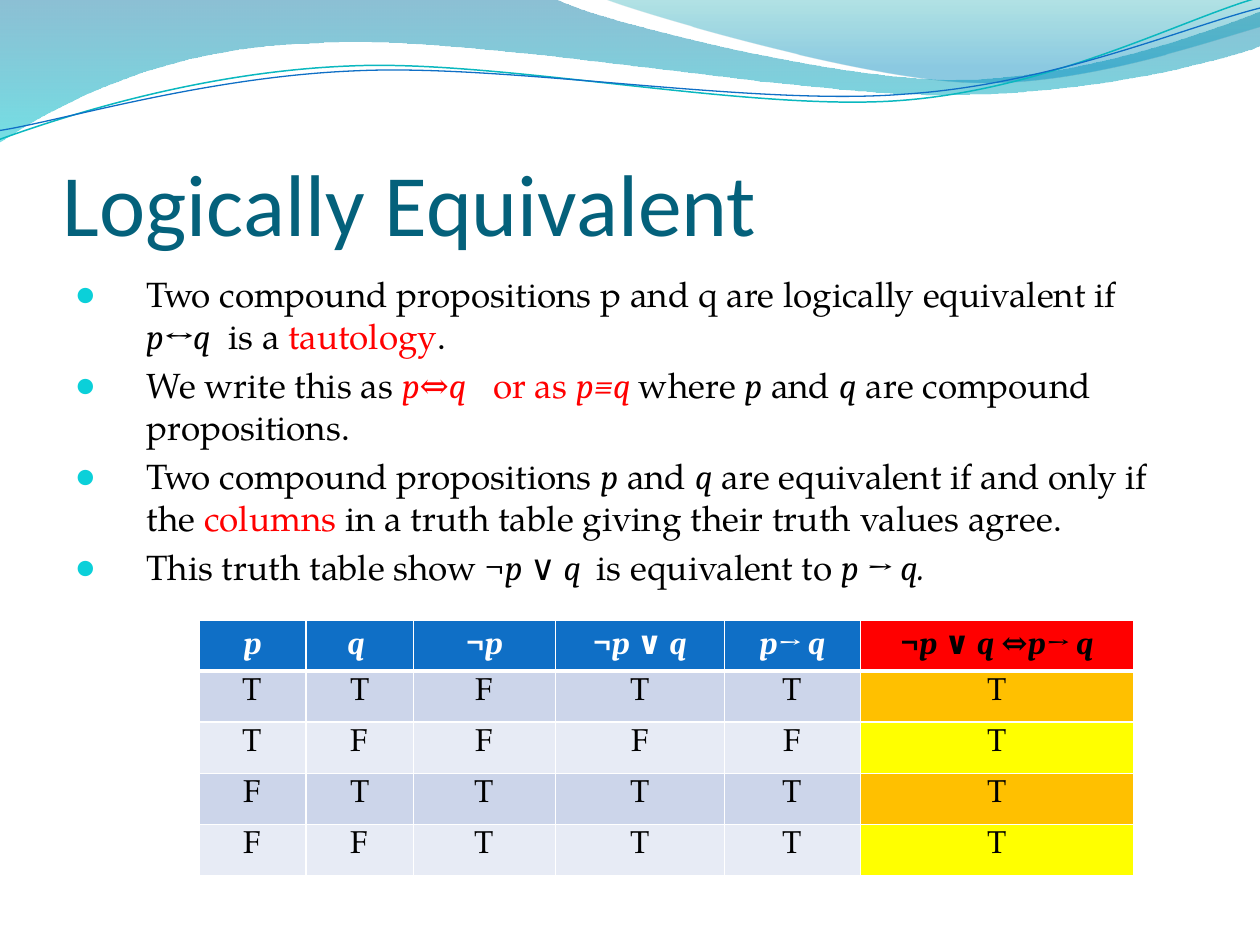
import lxml.etree
import pptx
import pptx.dml.color
import pptx.enum.text
import pptx.oxml.ns
import pptx.util

WIDE, HIGH = 10, 7.5
HUES = {
    "white": "FFFFFF", "black": "000000", "red": "FF0000", "title": "04617B",
    "bullet": "0BD0D9", "blue": "0F6FC6", "teal": "0AB8BF",
    "odd": "CCD5EA", "even": "E7EBF5", "gold": "FFC000", "yellow": "FFFF00",
    "deep": "0074A1", "aqua": "00C6CF", "green": "00A1A9", "sky": "008BBF",
}
SERIF, MATH, SANS = "TeX Gyre Pagella", "Cambria", "Calibri"

# Each outline: a start point, then lines (2 numbers) and curves (6 numbers).
BANDS = [
    ([(0, 0), (4.4, -0.01), (4.76, 0.17, 6.64, 0.63, 7.58, 0.63),
      (8.53, 0.63, 9.58, 0.26, 10, 0.09), (10.01, 0.36),
      (9.83, 0.44, 8.7, 0.76, 7.46, 0.75), (6.22, 0.75, 3.82, 0.28, 2.57, 0.34),
      (1.29, 0.36, 0.46, 0.83, -0.01, 1.13), (0, 0)],
     [(0, "deep", 45), (1, "aqua", 55)]),
    ([(4.79, -0.01), (5.09, 0.11, 6.82, 0.62, 7.69, 0.65),
      (8.56, 0.69, 9.61, 0.32, 10, 0.21), (10, 0), (4.79, -0.01)],
     [(0, "green", 30), (0.8, "sky", 45)]),
]
TILT = 357.3
WAVES = [
    ([(-0.02, 0.87), (0.47, 0.72, 1.58, 0.41, 2.78, 0.42),
      (3.96, 0.42, 5.91, 0.93, 7.12, 0.9), (8.32, 0.87, 9.4, 0.36, 10, 0.22)],
     "teal", 0.85),
    ([(-0.02, 0.8), (0.46, 0.75, 1.64, 0.45, 2.83, 0.46),
      (4.03, 0.46, 5.96, 0.89, 7.16, 0.85), (8.35, 0.83, 9.42, 0.42, 10.02, 0.3)],
     "blue", 0.75),
]

# Runs are (words, marks): m math font, i math italic, r red.
POINTS = [
    [("Two compound propositions p and q are logically equivalent if  ", ""),
     ("p↔q", "i"), ("  is a ", ""), ("tautology", "r"), (".", "")],
    [("We write this as ", ""), ("p⇔q", "ir"), ("   or as ", "r"), ("p≡q ", "ir"),
     ("where ", ""), ("p", "i"), (" and ", ""), ("q", "i"),
     (" are compound propositions.", "")],
    [("Two compound propositions ", ""), ("p", "i"), (" and ", ""), ("q", "i"),
     (" are equivalent if and only if the ", ""), ("columns", "r"),
     (" in a truth table giving their truth values agree.", "")],
    [("This truth table show ", ""), ("¬", "m"), ("p ", "i"), ("∨ ", "m"),
     ("q  ", "i"), ("is equivalent to ", ""), ("p → q.", "i")],
]
HEADS = [
    [("p", "i")], [("q ", "i")], [("¬", "m"), ("p", "i")],
    [("¬", "m"), ("p ", "i"), ("∨ ", "m"), ("q", "i")], [("p→ q", "i")],
    [("¬", "m"), ("p ", "i"), ("∨ ", "m"), ("q ⇔p→ q", "i")],
]
TRUTH = ["TTFTTT", "TFFFFT", "FTTTTT", "FFTTTT"]
COLS = [0.85, 0.85, 1.13, 1.34, 1.08, 2.17]


def inch(size):
    return pptx.util.Inches(size)


def hue(name):
    return pptx.dml.color.RGBColor.from_string(HUES[name])


def node(base, tag, **attrs):
    return lxml.etree.SubElement(base, pptx.oxml.ns.qn(tag), attrs)


def write(para, runs, size=20, font=SERIF, color="black", bold=False, center=False):
    if center:
        para.alignment = pptx.enum.text.PP_ALIGN.CENTER
    for words, marks in runs:
        run = para.add_run()
        run.text = words
        face = run.font
        face.size = pptx.util.Pt(size)
        face.name = MATH if "i" in marks or "m" in marks else font
        face.bold, face.italic = bold, "i" in marks
        face.color.rgb = hue("red" if "r" in marks else color)


def draw(slide, steps, close):
    """Build a freeform through the end points, then bend its curved parts."""
    ends = [(inch(step[-2]), inch(step[-1])) for step in steps]
    pen = slide.shapes.build_freeform(*ends[0], scale=1.0)
    pen.add_line_segments(ends[1:], close=close)
    shape = pen.convert_to_shape()
    shape.shadow.inherit = False
    lines = list(shape._element.iter(pptx.oxml.ns.qn("a:lnTo")))
    for line, step in zip(lines, steps[1:]):
        if len(step) == 6:
            curve = lxml.etree.Element(pptx.oxml.ns.qn("a:cubicBezTo"))
            for x, y in zip(step[::2], step[1::2]):
                node(curve, "a:pt", x=str(inch(x) - shape.left),
                     y=str(inch(y) - shape.top))
            line.getparent().replace(line, curve)
    return shape


def add_band(slide, steps, stops):
    shape = draw(slide, steps, True)
    shape.line.fill.background()
    shape.fill.gradient()
    shape.fill.gradient_angle = 270
    for stop, (place, name, _) in zip(shape.fill.gradient_stops, stops):
        stop.position = place
        stop.color.rgb = hue(name)
    tints = list(shape._element.iter(pptx.oxml.ns.qn("a:srgbClr")))
    for tint, (_, _, alpha) in zip(tints, stops):
        node(tint, "a:alpha", val=str(alpha * 1000))


def add_wave(slide, steps, name, width):
    shape = draw(slide, steps, False)
    shape.rotation = TILT
    shape.fill.background()
    shape.line.color.rgb = hue(name)
    shape.line.width = pptx.util.Pt(width)


def add_box(slide, top, high):
    """Add a wrapped text frame between the side margins."""
    edge = 0.05 * WIDE
    box = slide.shapes.add_textbox(inch(edge), inch(top * HIGH),
                                   inch(WIDE - 2 * edge), inch(high * HIGH))
    box.text_frame.word_wrap = True
    return box.text_frame


def add_title(slide):
    frame = add_box(slide, 0.102, 0.167)
    frame.margin_left = frame.margin_right = frame.margin_bottom = 0
    frame.vertical_anchor = pptx.enum.text.MSO_ANCHOR.BOTTOM
    write(frame.paragraphs[0], [("Logically Equivalent", "")],
          size=50, font=SANS, color="title")


def add_points(slide):
    frame = add_box(slide, 0.282, 0.64)
    indent = pptx.util.Pt(40.5)
    for n, runs in enumerate(POINTS):
        para = frame.add_paragraph() if n else frame.paragraphs[0]
        para.space_before = pptx.util.Pt(4)
        props = para._p.get_or_add_pPr()
        props.set("marL", str(indent))
        props.set("indent", str(-indent))
        node(node(props, "a:buClr"), "a:srgbClr", val=HUES["bullet"])
        node(props, "a:buSzPct", val="95000")
        node(props, "a:buFont", typeface=SANS)
        node(props, "a:buChar", char="●")
        write(para, runs)


def edge_cell(cell, top, low):
    """Draw white borders, given the top and bottom widths in points."""
    props = cell._tc.get_or_add_tcPr()
    for n, (side, width) in enumerate(zip("LRTB", (1, 1, top, low))):
        line = node(props, "a:ln" + side, w=str(pptx.util.Pt(width)))
        node(node(line, "a:solidFill"), "a:srgbClr", val=HUES["white"])
        props.insert(n, line)


def add_table(slide):
    rows = [HEADS] + [[[(mark, "")] for mark in row] for row in TRUTH]
    high = 2.03
    table = slide.shapes.add_table(
        len(rows), len(COLS), inch(0.158 * WIDE), inch(0.656 * HIGH),
        inch(sum(COLS)), inch(high)).table
    table.horz_banding = False
    for col, wide in zip(table.columns, COLS):
        col.width = inch(wide)
    for r, row in enumerate(rows):
        table.rows[r].height = inch(high / len(rows))
        for c, runs in enumerate(row):
            cell, last = table.cell(r, c), c == len(COLS) - 1
            if r == 0:
                fill = "red" if last else "blue"
            else:
                pair = ("gold", "yellow") if last else ("odd", "even")
                fill = pair[(r - 1) % 2]
            cell.fill.solid()
            cell.fill.fore_color.rgb = hue(fill)
            edge_cell(cell, 3 if r == 1 else 1, 3 if r == 0 else 1)
            write(cell.text_frame.paragraphs[0], runs, size=18, bold=r == 0, center=True,
                  color="white" if r == 0 and not last else "black")


def main():
    deck = pptx.Presentation()
    deck.slide_width, deck.slide_height = inch(WIDE), inch(HIGH)
    slide = deck.slides.add_slide(deck.slide_layouts[6])
    for band in BANDS:
        add_band(slide, *band)
    for wave in WAVES:
        add_wave(slide, *wave)
    add_title(slide)
    add_points(slide)
    add_table(slide)
    deck.save("out.pptx")


if __name__ == "__main__":
    main()
